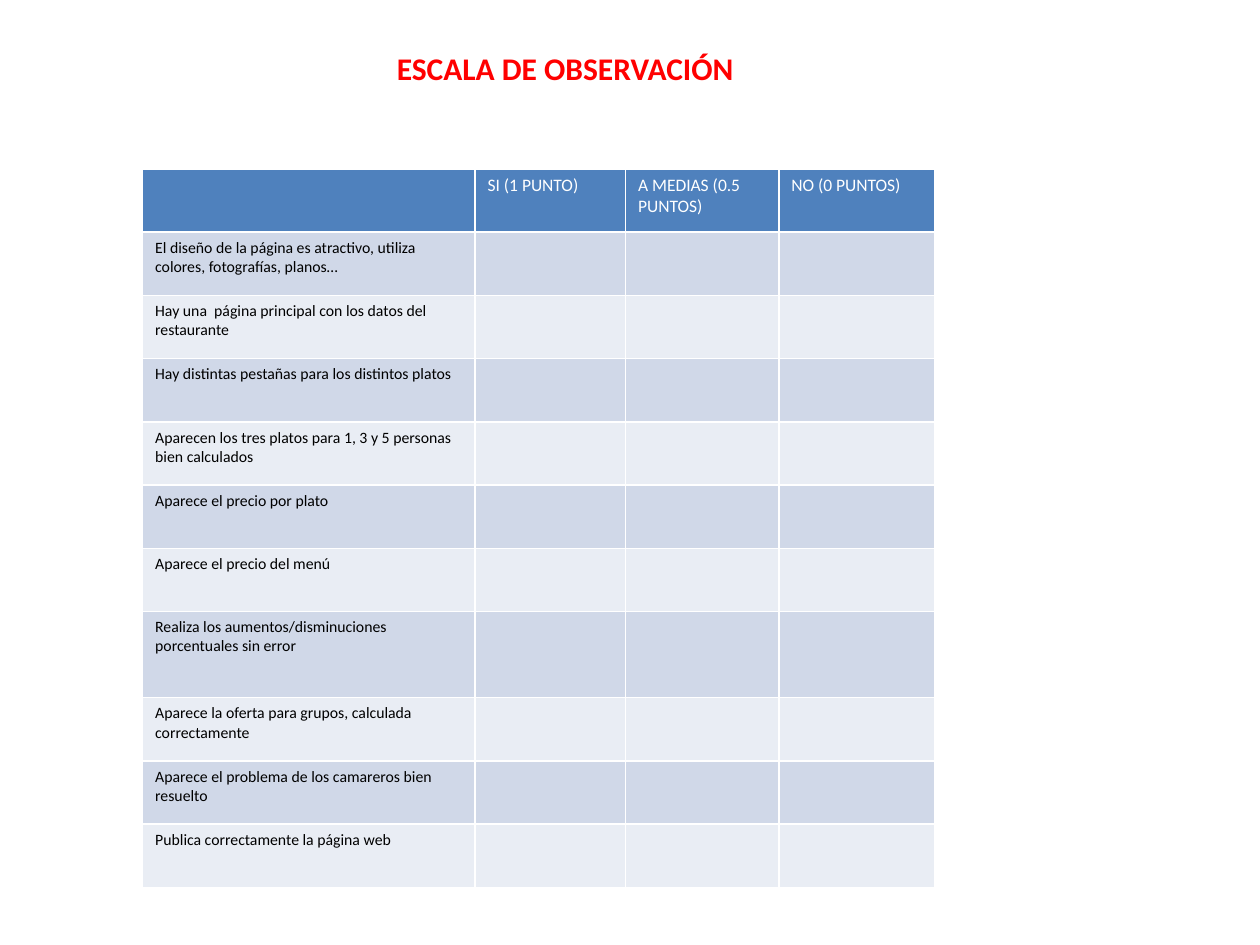
from pptx import Presentation
from pptx.dml.color import RGBColor as Rgb
from pptx.enum.text import MSO_ANCHOR as Anchor, MSO_AUTO_SIZE as Fit, PP_ALIGN as Align
from pptx.util import Pt

HUES = {"red": "FF0000", "head": "4F81BD", "dark": "D0D8E8",
        "pale": "E9EDF4", "white": "FFFFFF", "black": "000000"}
HEADS = ["", "SI (1 PUNTO)", "A MEDIAS (0.5 PUNTOS)", "NO (0 PUNTOS)"]
ITEMS = [
    "El diseño de la página es atractivo, utiliza colores, fotografías, planos…",
    "Hay una  página principal con los datos del restaurante",
    "Hay distintas pestañas para los distintos platos",
    "Aparecen los tres platos para 1, 3 y 5 personas bien calculados",
    "Aparece el precio por plato",
    "Aparece el precio del menú",
    "Realiza los aumentos/disminuciones porcentuales sin error",
    "Aparece la oferta para grupos, calculada correctamente",
    "Aparece el problema de los camareros bien resuelto",
    "Publica correctamente la página web",
]
WIDTHS = [190, 86, 87.6, 89.4]
ROW, TALL = 36.15, 49.2
TALL_ROW = 7


def style(par, size, hue, bold=False):
    """Set the font of one paragraph."""
    font = par.font
    font.name, font.size, font.bold = "Calibri", Pt(size), bold
    font.color.rgb = Rgb.from_string(HUES[hue])


def add_title(slide, text):
    """Place and format the title."""
    title = slide.shapes.title
    title.left, title.top, title.width, title.height = map(Pt, (51, 24.5, 544, 29))
    frame = title.text_frame
    frame.text = text
    frame.word_wrap = True
    frame.auto_size = Fit.SHAPE_TO_FIT_TEXT
    frame.vertical_anchor = Anchor.TOP
    par = frame.paragraphs[0]
    par.alignment = Align.CENTER
    style(par, 18, "red", True)


def fill_cell(cell, text, fill, size, hue):
    """Set the fill and text of one cell."""
    cell.fill.solid()
    cell.fill.fore_color.rgb = Rgb.from_string(HUES[fill])
    cell.text = text
    style(cell.text_frame.paragraphs[0], size, hue)


def add_scale(slide):
    """Add the table with a header and one row per item."""
    rows = [HEADS] + [[item, "", "", ""] for item in ITEMS]
    highs = [TALL if i == TALL_ROW else ROW for i in range(len(rows))]
    table = slide.shapes.add_table(
        len(rows), len(HEADS), Pt(81.5), Pt(96.5), Pt(sum(WIDTHS)), Pt(sum(highs))).table
    for col, width in zip(table.columns, WIDTHS):
        col.width = Pt(width)
    for i, (row, texts) in enumerate(zip(table.rows, rows)):
        row.height = Pt(highs[i])
        look = ("dark" if i % 2 else "pale", 9, "black") if i else ("head", 10, "white")
        for cell, text in zip(row.cells, texts):
            fill_cell(cell, text, *look)


def main():
    """Build and save the slide."""
    deck = Presentation()
    deck.slide_width, deck.slide_height = Pt(720), Pt(540)
    slide = deck.slides.add_slide(deck.slide_layouts[5])
    add_title(slide, "ESCALA DE OBSERVACIÓN")
    add_scale(slide)
    deck.save("out.pptx")


if __name__ == "__main__":
    main()
